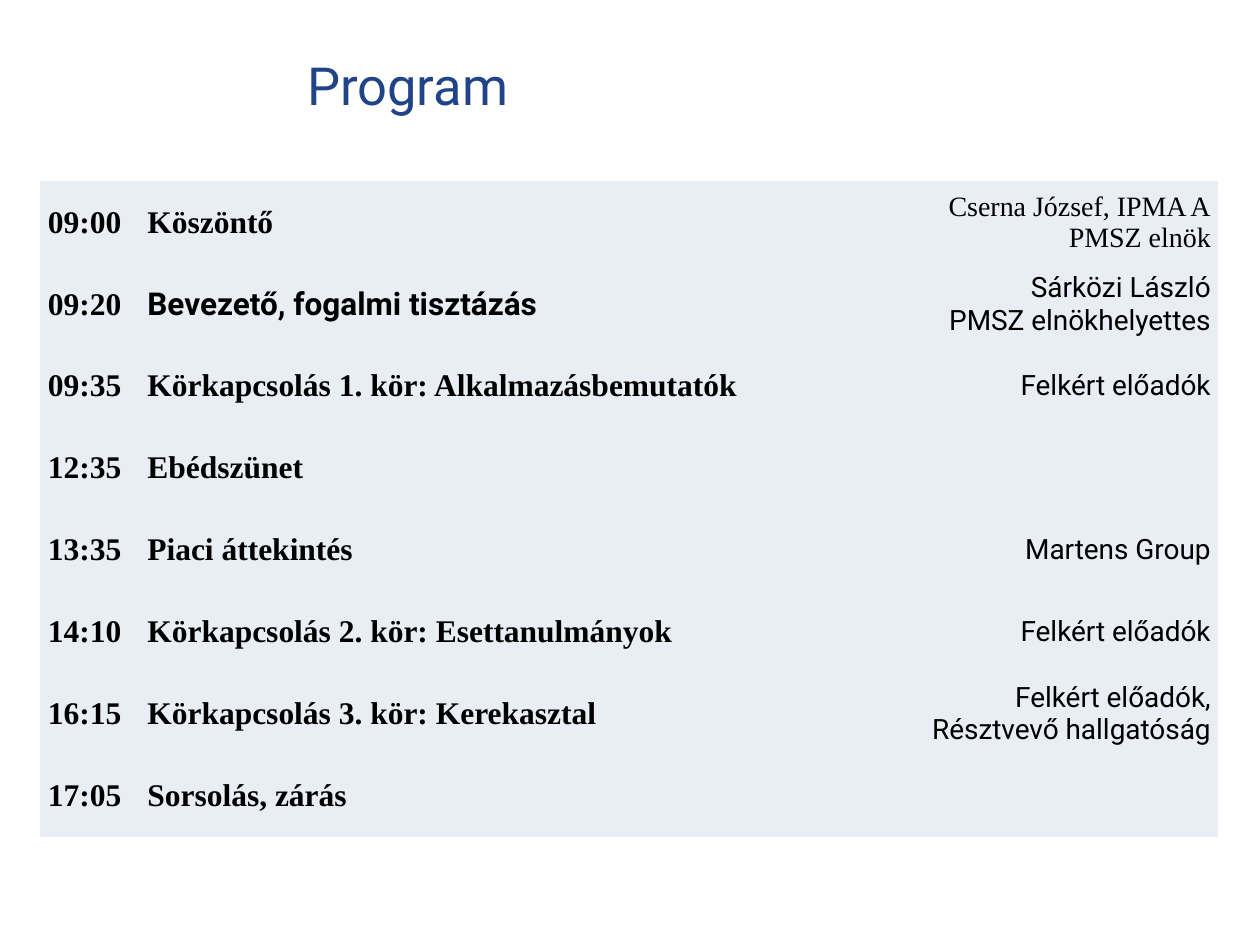
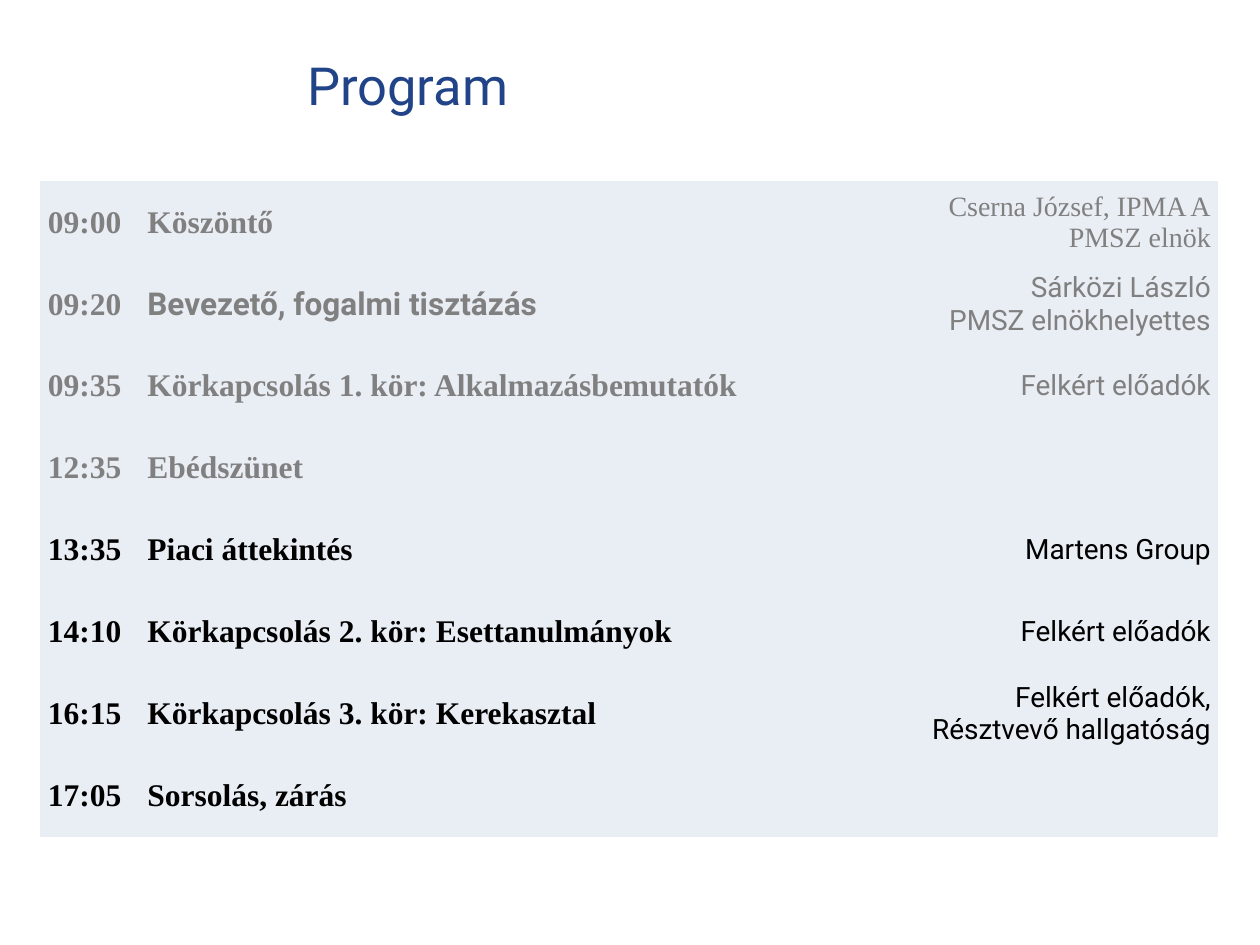
from pptx import Presentation
from pptx.dml.color import RGBColor as RGB
from pptx.enum.text import MSO_ANCHOR as ANCHOR, PP_ALIGN as ALIGN
from pptx.oxml.ns import qn
from pptx.util import Inches, Pt

COLORS = {"title": "214488", "cell": "E9EDF4", "text": "000000", "done": "808080"}
SANS, SERIF = "Roboto", "Times New Roman"
NO_STYLE = "{2D5ABB26-0587-4C30-8999-92F81FD0307C}"
COL_WIDTHS = [0.79, 5.77, 2.79]
ROW_HEIGHT = 0.65

# Time, topic, speaker, topic font, speaker font
PROGRAM = [
    ("09:00", "Köszöntő", "Cserna József, IPMA A\nPMSZ elnök", SERIF, SERIF),
    ("09:20", "Bevezető, fogalmi tisztázás", "Sárközi László\nPMSZ elnökhelyettes", SANS, SANS),
    ("09:35", "Körkapcsolás 1. kör: Alkalmazásbemutatók", "Felkért előadók", SERIF, SANS),
    ("12:35", "Ebédszünet", "", SERIF, SANS),
    ("13:35", "Piaci áttekintés", "Martens Group", SERIF, SANS),
    ("14:10", "Körkapcsolás 2. kör: Esettanulmányok", "Felkért előadók", SERIF, SANS),
    ("16:15", "Körkapcsolás 3. kör: Kerekasztal", "Felkért előadók,\nRésztvevő hallgatóság", SERIF, SANS),
    ("17:05", "Sorsolás, zárás", "", SERIF, SANS),
]


def style_text(tf, font, size, color, bold=False, align=ALIGN.LEFT):
    for p in tf.paragraphs:
        p.alignment = align
        for r in p.runs:
            r.font.name = font
            r.font.size = Pt(size)
            r.font.bold = bold
            r.font.color.rgb = RGB.from_string(COLORS[color])


prs = Presentation()
prs.slide_width, prs.slide_height = Inches(10), Inches(7.5)

# One slide per state of the day: number of sessions already finished
for done_count in (0, 4):
    s = prs.slides.add_slide(prs.slide_layouts[6])

    # Title
    tf = s.shapes.add_textbox(Inches(2.34), Inches(0.16), Inches(7.5), Inches(1.02)).text_frame
    tf.word_wrap = True
    tf.vertical_anchor = ANCHOR.MIDDLE
    tf.text = "Program"
    style_text(tf, SANS, 30, "title")

    # Schedule table
    table = s.shapes.add_table(
        len(PROGRAM), len(COL_WIDTHS), Inches(0.32), Inches(1.44),
        Inches(sum(COL_WIDTHS)), Inches(ROW_HEIGHT * len(PROGRAM))).table
    table.first_row = table.horz_banding = False
    table._tbl.tblPr.find(qn("a:tableStyleId")).text = NO_STYLE
    for column, width in zip(table.columns, COL_WIDTHS):
        column.width = Inches(width)

    # Sessions
    for i, (time, topic, speaker, topic_font, speaker_font) in enumerate(PROGRAM):
        table.rows[i].height = Inches(ROW_HEIGHT)
        color = "done" if i < done_count else "text"
        columns = [
            (time, SERIF, 18, True, ALIGN.LEFT),
            (topic, topic_font, 18, True, ALIGN.LEFT),
            (speaker, speaker_font, 16, False, ALIGN.RIGHT),
        ]
        for j, (text, font, size, bold, align) in enumerate(columns):
            cell = table.cell(i, j)
            cell.fill.solid()
            cell.fill.fore_color.rgb = RGB.from_string(COLORS["cell"])
            cell.vertical_anchor = ANCHOR.MIDDLE
            cell.margin_left = cell.margin_right = Inches(0.06)
            cell.margin_top = cell.margin_bottom = 0
            cell.text_frame.text = text
            style_text(cell.text_frame, font, size, color, bold, align)

prs.save("out.pptx")
